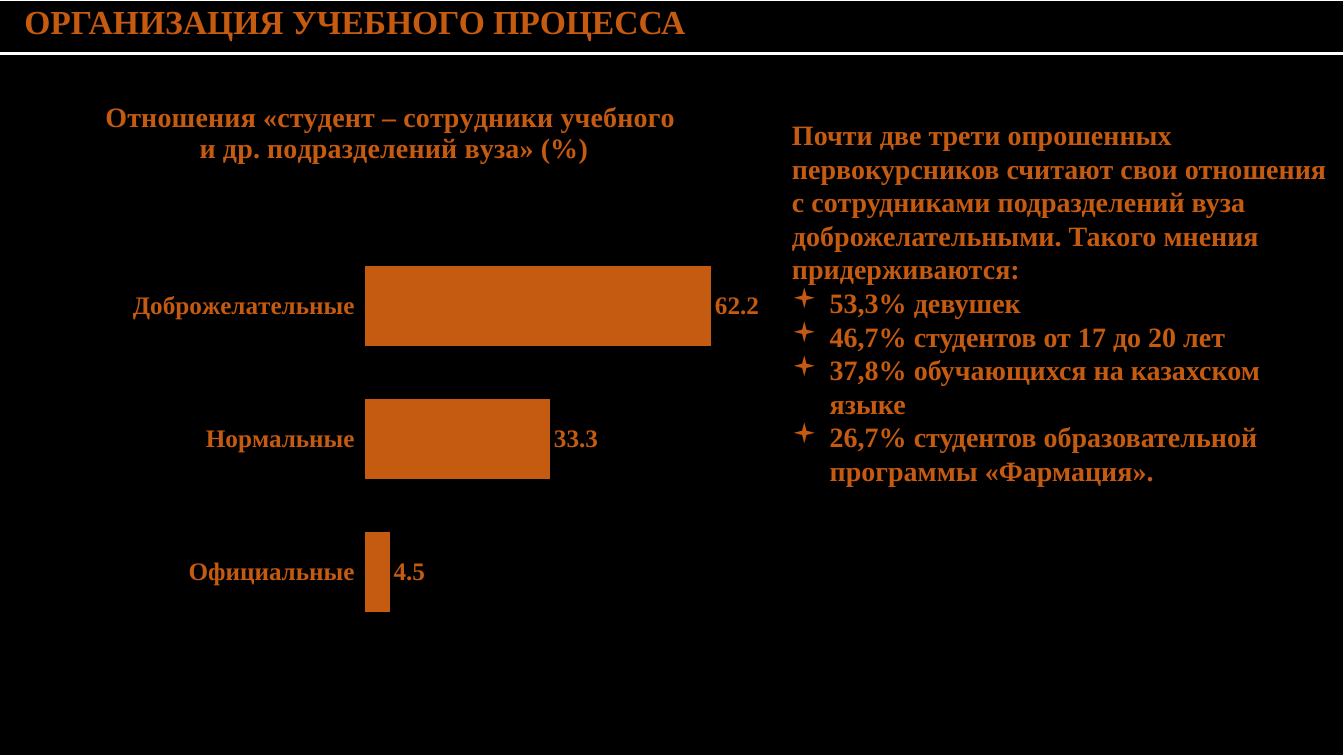
from dataclasses import dataclass

from lxml.etree import SubElement
from pptx import Presentation
from pptx.chart.data import CategoryChartData
from pptx.dml.color import RGBColor
from pptx.enum.chart import XL_CHART_TYPE, XL_LABEL_POSITION, XL_TICK_LABEL_POSITION, XL_TICK_MARK
from pptx.oxml import parse_xml
from pptx.oxml.ns import nsdecls, qn
from pptx.util import Cm, Pt


@dataclass(frozen=True)
class Theme:
    font: str = "Times New Roman"
    accent: RGBColor = RGBColor(0xC5, 0x5A, 0x11)
    background: RGBColor = RGBColor(0, 0, 0)
    border: RGBColor = RGBColor(255, 255, 255)
    heading: int = 24
    body: int = 20
    label: int = 18


THEME = Theme()

HEADING = "ОРГАНИЗАЦИЯ УЧЕБНОГО ПРОЦЕССА"
CHART_TITLE = ("Отношения «студент – сотрудники учебного ", "и др. подразделений вуза» (%)")
ATTITUDES = {"Официальные": 4.5, "Нормальные": 33.3, "Доброжелательные": 62.2}
INTRO = ("Почти две трети опрошенных первокурсников считают свои отношения "
         "с сотрудниками подразделений вуза доброжелательными. "
         "Такого мнения придерживаются:")
FINDINGS = (
    "53,3% девушек",
    "46,7% студентов от 17 до 20 лет",
    "37,8% обучающихся на казахском языке",
    "26,7% студентов образовательной программы «Фармация».",
)


def format_font(font, size):
    font.name = THEME.font
    font.size = Pt(size)
    font.bold = True
    font.color.rgb = THEME.accent


def write_text(para, text, size=THEME.body, left=0, indent=0, bullet=None):
    span = para.add_run()
    span.text = text
    format_font(span.font, size)
    properties = para._p.get_or_add_pPr()
    properties.set("marL", str(Cm(left)))
    properties.set("indent", str(Cm(indent)))
    if bullet:
        SubElement(properties, qn("a:buFont"), typeface="Wingdings")
        SubElement(properties, qn("a:buChar"), char=bullet)


def format_cell(cell, top, bottom):
    cell.fill.solid()
    cell.fill.fore_color.rgb = THEME.background
    properties = cell._tc.get_or_add_tcPr()
    widths = {"lnL": 1, "lnR": 1, "lnT": top, "lnB": bottom}
    for position, (side, width) in enumerate(widths.items()):
        properties.insert(position, parse_xml(
            f'<a:{side} {nsdecls("a")} w="{Pt(width)}"><a:solidFill>'
            f'<a:srgbClr val="{THEME.border}"/></a:solidFill></a:{side}>'))


def add_frame(page, left, top, width, height, header_height=1.35):
    """Heading row above a black content area."""
    table = page.shapes.add_table(2, 1, Cm(left), Cm(top), Cm(width), Cm(height)).table
    table.rows[0].height = Cm(header_height)
    table.rows[1].height = Cm(height - header_height)
    header, content = table.cell(0, 0), table.cell(1, 0)
    format_cell(header, top=1, bottom=3)
    format_cell(content, top=3, bottom=1)
    write_text(header.text_frame.paragraphs[0], HEADING, size=THEME.heading, indent=0.74)


def add_findings(page, left, top, width, height):
    """Introduction and bulleted shares."""
    box = page.shapes.add_textbox(Cm(left), Cm(top), Cm(width), Cm(height))
    frame = box.text_frame
    frame.word_wrap = True
    frame.margin_top = Cm(0.98)
    write_text(frame.paragraphs[0], INTRO)
    for finding in FINDINGS:
        write_text(frame.add_paragraph(), finding, left=0.95, indent=-0.95, bullet="▪")


def place_plot(chart, x, y, w, h):
    """Fix the inner plot area as fractions of the chart."""
    plot_area = chart._chartSpace.chart.plotArea
    for layout in plot_area.findall(qn("c:layout")):
        plot_area.remove(layout)
    sizes = "".join(f'<c:{name} val="{value}"/>'
                    for name, value in (("x", x), ("y", y), ("w", w), ("h", h)))
    plot_area.insert(0, parse_xml(
        f'<c:layout {nsdecls("c")}><c:manualLayout><c:layoutTarget val="inner"/>'
        f'<c:xMode val="edge"/><c:yMode val="edge"/>{sizes}</c:manualLayout></c:layout>'))


def add_attitude_chart(page, left, top, width, height):
    """Bar chart of attitudes, with its title."""
    data = CategoryChartData(number_format="General")
    data.categories = list(ATTITUDES)
    data.add_series("Отношения", list(ATTITUDES.values()))
    chart = page.shapes.add_chart(XL_CHART_TYPE.BAR_CLUSTERED, Cm(left), Cm(top),
                                  Cm(width), Cm(height), data).chart
    chart.has_legend = False
    format_font(chart.font, THEME.label)

    title = chart.chart_title.text_frame
    write_text(title.paragraphs[0], CHART_TITLE[0])
    write_text(title.add_paragraph(), CHART_TITLE[1])
    place_plot(chart, x=0.46, y=0.25, w=0.53, h=0.62)

    # Axes
    categories, values = chart.category_axis, chart.value_axis
    categories.major_tick_mark = XL_TICK_MARK.NONE
    categories.tick_label_position = XL_TICK_LABEL_POSITION.LOW
    categories.format.line.color.rgb = THEME.background
    categories.format.line.width = Pt(0.75)
    format_font(categories.tick_labels.font, THEME.label)
    values.visible = False
    values.has_major_gridlines = False
    values.minimum_scale, values.maximum_scale = 0, 70

    # Bars and value labels
    plot = chart.plots[0]
    plot.gap_width = 66
    plot.vary_by_categories = False
    fill = plot.series[0].format.fill
    fill.solid()
    fill.fore_color.rgb = THEME.accent
    plot.has_data_labels = True
    labels = plot.data_labels
    labels.show_value = True
    labels.position = XL_LABEL_POSITION.OUTSIDE_END
    format_font(labels.font, THEME.label)


def main():
    deck = Presentation()
    deck.slide_width, deck.slide_height = Cm(33.87), Cm(19.05)
    page = deck.slides.add_slide(deck.slide_layouts[6])
    add_frame(page, left=-0.38, top=0, width=34.24, height=19.05)
    add_findings(page, left=19.71, top=1.98, width=14.17, height=15.65)
    add_attitude_chart(page, left=0.66, top=1.98, width=18.54, height=16.23)
    deck.save("out.pptx")


if __name__ == "__main__":
    main()
